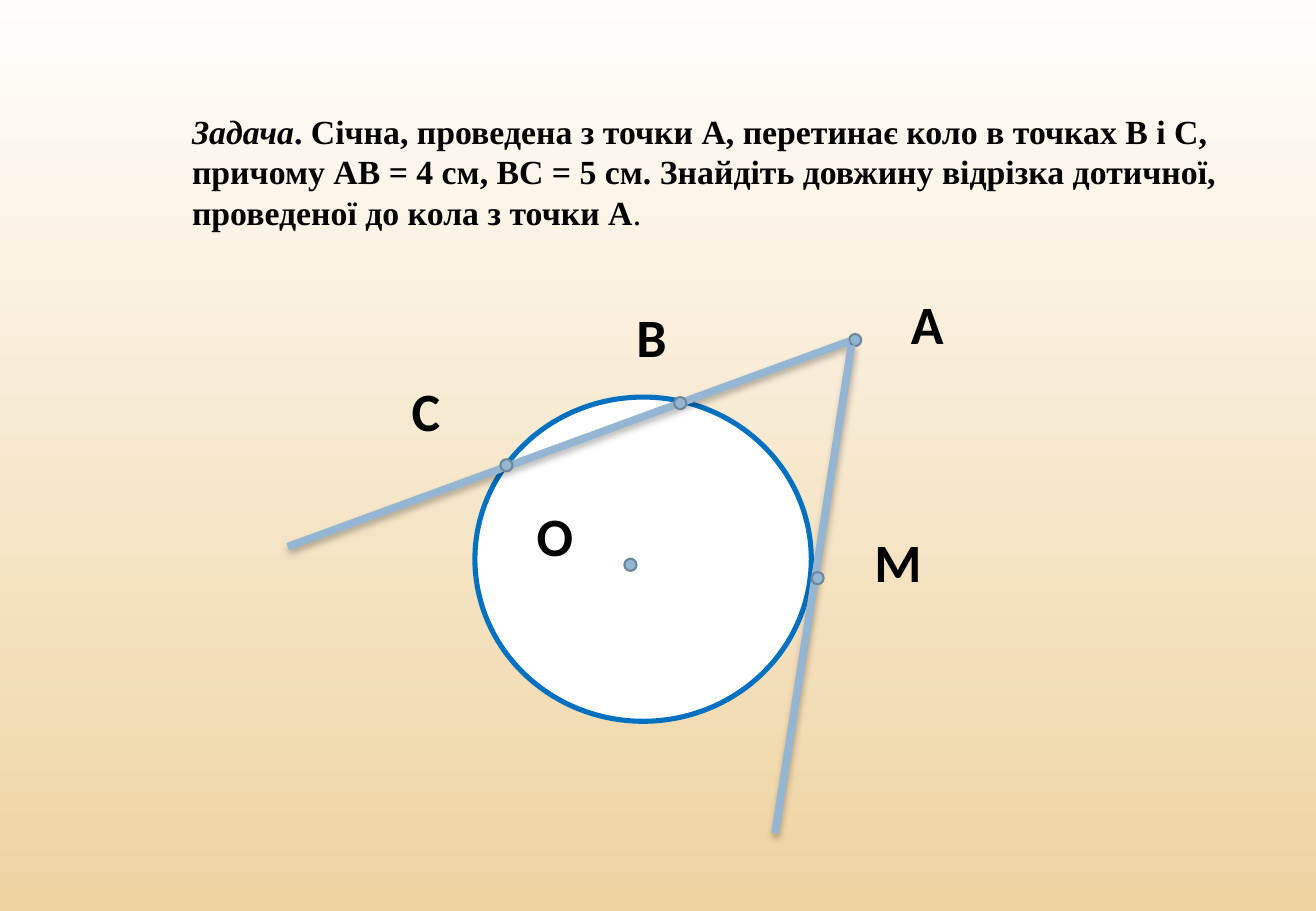
import pptx
import pptx.dml.color
import pptx.enum.shapes
import pptx.enum.text
import pptx.oxml
import pptx.oxml.ns
import pptx.util

Pt = pptx.util.Pt
OVAL = pptx.enum.shapes.MSO_SHAPE.OVAL
STEEL_BLUE = "94B6D2"
DOT_SIZE = 7.2

# Each point: letter, centre of the dot, top left of the letter box
POINT_A = ("А", (506.9, 201.6), (532.8, 168.5))
POINTS_ON_LINES = [
    ("В", (403.2, 239), (370.1, 176.4)),
    ("С", (300.2, 275.8), (236.9, 220.3)),
    ("М", (484.6, 342.7), (511.2, 309.6)),
    ("О", (373.7, 334.8), (311, 294.5)),
]
SECANT = ((170.6, 324), (503.3, 202.3))
TANGENT = ((459.4, 493.9), (504.7, 204.5))

PROBLEM = [
    ("Задача", True, True),
    (". Січна, проведена з точки A, перетинає коло в точках B і C, "
     "причому AB = 4 см, BC = 5 см. Знайдіть довжину відрізка дотичної, "
     "проведеної до кола з точки A", True, False),
    (".", False, False),
]

SOFT_SHADOW = (
    f'<a:effectLst {pptx.oxml.ns.nsdecls("a")}>'
    '<a:outerShdw blurRad="50800" dist="25400" dir="5400000" rotWithShape="0">'
    '<a:srgbClr val="000000"><a:alpha val="28000"/></a:srgbClr>'
    '</a:outerShdw></a:effectLst>'
)


def color(hex_string):
    return pptx.dml.color.RGBColor.from_string(hex_string)


def set_font(run, name, size, bold=True, italic=False):
    run.font.name = name
    run.font.size = Pt(size)
    run.font.bold = bold
    run.font.italic = italic
    run.font.color.rgb = color("000000")


def paint_background(slide, top, bottom):
    fill = slide.background.fill
    fill.gradient()
    fill.gradient_angle = 270
    for stop, shade, position in zip(fill.gradient_stops, (top, bottom), (0, 1)):
        stop.color.rgb = color(shade)
        stop.position = position


def add_problem(slide):
    statement = slide.shapes.title
    statement.left, statement.top = Pt(106.6), Pt(61.9)
    statement.width, statement.height = Pt(622), Pt(80)
    frame = statement.text_frame
    frame.word_wrap = True
    frame.auto_size = pptx.enum.text.MSO_AUTO_SIZE.NONE
    frame.vertical_anchor = pptx.enum.text.MSO_ANCHOR.TOP
    paragraph = frame.paragraphs[0]
    paragraph.alignment = pptx.enum.text.PP_ALIGN.LEFT
    for words, bold, italic in PROBLEM:
        run = paragraph.add_run()
        run.text = words
        set_font(run, "Times New Roman", 20, bold, italic)


def add_ellipse(slide, left, top, width, height, fill, outline, weight):
    ellipse = slide.shapes.add_shape(
        OVAL, Pt(left), Pt(top), Pt(width), Pt(height))
    ellipse.shadow.inherit = False
    ellipse.fill.solid()
    ellipse.fill.fore_color.rgb = color(fill)
    ellipse.line.color.rgb = color(outline)
    ellipse.line.width = Pt(weight)


def add_ray(slide, start, end):
    ray = slide.shapes.add_connector(
        pptx.enum.shapes.MSO_CONNECTOR.STRAIGHT,
        *(Pt(length) for length in start + end))
    ray.line.color.rgb = color(STEEL_BLUE)
    ray.line.width = Pt(4.5)
    ray._element.spPr.append(pptx.oxml.parse_xml(SOFT_SHADOW))


def add_point(slide, letter, centre, corner):
    """Draw the dot of a point and its letter."""
    x, y = centre
    add_ellipse(slide, x - DOT_SIZE / 2, y - DOT_SIZE / 2, DOT_SIZE, DOT_SIZE,
                STEEL_BLUE, "6D879B", 1.25)
    left, top = corner
    label = slide.shapes.add_textbox(Pt(left), Pt(top), Pt(59), Pt(46))
    frame = label.text_frame
    frame.word_wrap = True
    frame.text = letter
    set_font(frame.paragraphs[0].runs[0], "Calibri", 32)


def main():
    deck = pptx.Presentation()
    deck.slide_width, deck.slide_height = Pt(780), Pt(540)
    slide = deck.slides.add_slide(deck.slide_layouts.get_by_name("Title Only"))
    paint_background(slide, "FFFEFC", "EED3A1")
    add_problem(slide)
    add_ellipse(slide, 281.5, 235.4, 199.4, 192.2, "FFFFFF", "0070C0", 3)
    add_point(slide, *POINT_A)
    for start, end in (SECANT, TANGENT):
        add_ray(slide, start, end)
    for point in POINTS_ON_LINES:
        add_point(slide, *point)
    deck.save("out.pptx")


if __name__ == "__main__":
    main()
